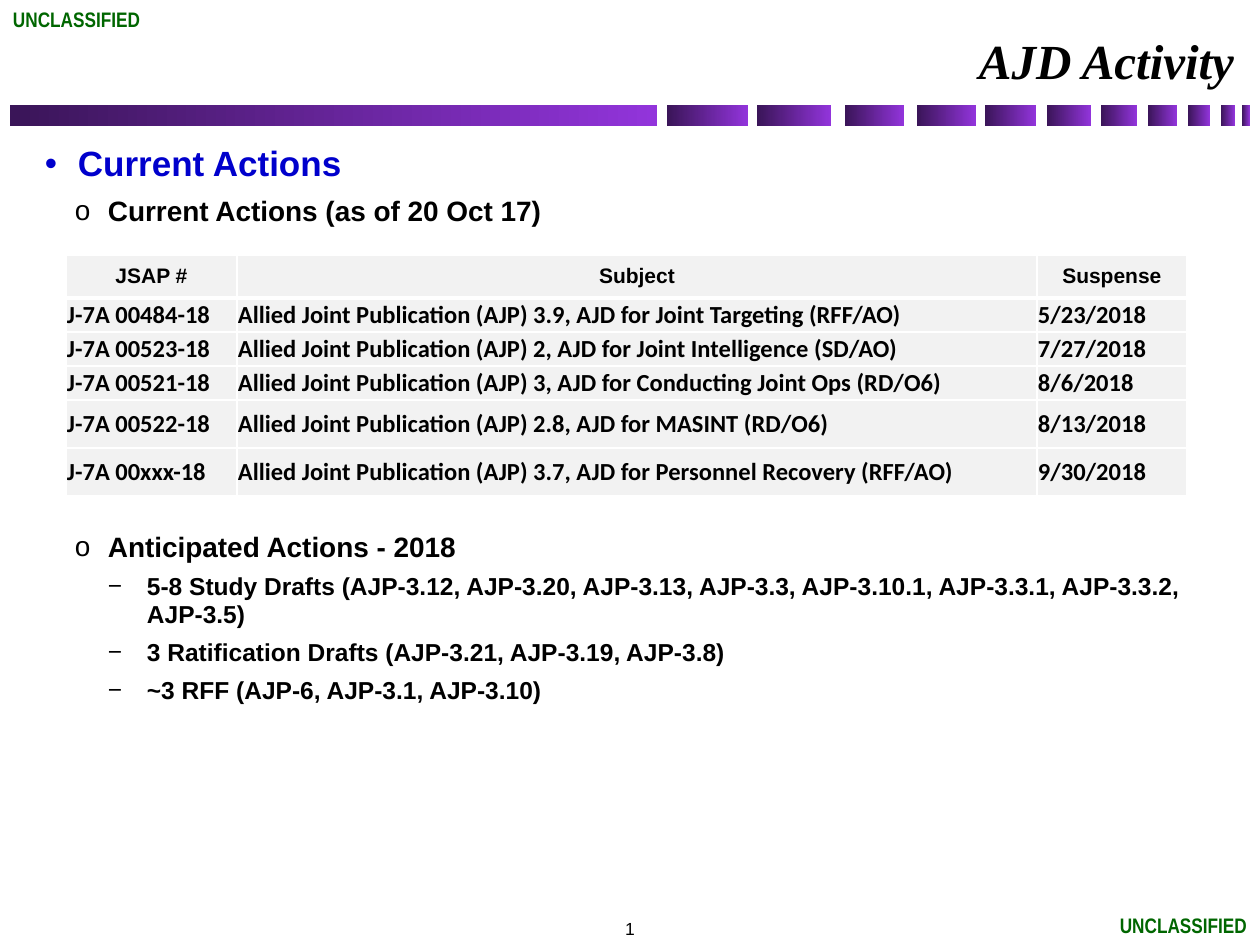
"""Build the AJD Activity status slide."""
from typing import NamedTuple

from lxml import etree
from pptx import Presentation
from pptx import util as u
from pptx.dml.color import RGBColor
from pptx.enum import shapes, text
from pptx.oxml.ns import qn

EMU_PER_PX = 914400 / 126
BLACK = RGBColor(0x00, 0x00, 0x00)
WHITE = RGBColor(0xFF, 0xFF, 0xFF)
BLUE = RGBColor(0x00, 0x00, 0xCC)
GREEN = RGBColor(0x00, 0x66, 0x00)
CELL_GRAY = RGBColor(0xF2, 0xF2, 0xF2)
DARK_PURPLE = RGBColor(0x3A, 0x15, 0x58)
LIGHT_PURPLE = RGBColor(0x92, 0x34, 0xDB)
LEFT, CENTER, RIGHT = text.PP_ALIGN.LEFT, text.PP_ALIGN.CENTER, text.PP_ALIGN.RIGHT
TOP, BOTTOM = text.MSO_ANCHOR.TOP, text.MSO_ANCHOR.BOTTOM


class Box(NamedTuple):
    left: int
    top: int
    width: int
    height: int


class Font(NamedTuple):
    size: int
    name: str = "Arial"
    color: RGBColor = BLACK
    bold: bool = True
    italic: bool = False


class Label(NamedTuple):
    words: str
    box: Box
    font: Font
    align: text.PP_ALIGN = LEFT
    anchor: text.MSO_ANCHOR = TOP
    side_inset: int = 13
    wrap: bool = True


class Level(NamedTuple):
    bullet: str
    indent: int
    hanging: int
    font: Font


class Item(NamedTuple):
    level: Level
    words: str
    space_before: float


MARKING = Font(12, "Arial Narrow", GREEN)
LABELS = [
    Label("UNCLASSIFIED", Box(942, 907, 318, 39), MARKING, RIGHT),
    Label("UNCLASSIFIED", Box(0, 1, 305, 39), MARKING),
    Label("AJD Activity", Box(159, 28, 1081, 67),
          Font(28, "Times New Roman", italic=True), RIGHT, BOTTOM, 6),
    Label("1", Box(499, 882, 262, 63), Font(10, bold=False), CENTER, BOTTOM, wrap=False),
]

BAR_TOP, BAR_HEIGHT = 105, 21
BAR_SPANS = [(10, 647), (667, 81), (757, 74), (845, 59), (917, 59), (985, 51),
             (1047, 44), (1101, 36), (1148, 29), (1188, 22), (1221, 14), (1242, 8)]

TOPIC = Level("•", 33, 33, Font(20, color=BLUE))
SECTION = Level("o", 63, 33, Font(16))
DETAIL = Level("−", 102, 39, Font(14))
BODY_BOX = Box(32, 139, 1183, 762)
ITEMS = [
    Item(TOPIC, "Current Actions", 0),
    Item(SECTION, "Current Actions (as of 20 Oct 17)", 6.4),
    Item(SECTION, "Anticipated Actions - 2018", 173.4),
    Item(DETAIL, "5-8 Study Drafts (AJP-3.12, AJP-3.20, AJP-3.13, AJP-3.3, "
                 "AJP-3.10.1, AJP-3.3.1, AJP-3.3.2, AJP-3.5)", 5.6),
    Item(DETAIL, "3 Ratification Drafts (AJP-3.21, AJP-3.19, AJP-3.8)", 5.6),
    Item(DETAIL, "~3 RFF (AJP-6, AJP-3.1, AJP-3.10)", 5.6),
]

TABLE_LEFT, TABLE_TOP = 66, 255
COLUMN_WIDTHS = [171, 800, 150]
ROW_HEIGHTS = [43, 34, 34, 34, 48, 48]
PUBLICATION = "Allied Joint Publication (AJP) "
ACTIONS = [
    ("JSAP #", "Subject", "Suspense"),
    ("J-7A 00484-18", PUBLICATION + "3.9, AJD for Joint Targeting (RFF/AO)", "5/23/2018"),
    ("J-7A 00523-18", PUBLICATION + "2, AJD for Joint Intelligence (SD/AO)", "7/27/2018"),
    ("J-7A 00521-18", PUBLICATION + "3, AJD for Conducting Joint Ops (RD/O6)", "8/6/2018"),
    ("J-7A 00522-18", PUBLICATION + "2.8, AJD for MASINT (RD/O6)", "8/13/2018"),
    ("J-7A 00xxx-18", PUBLICATION + "3.7, AJD for Personnel Recovery (RFF/AO)", "9/30/2018"),
]


def px(length: int) -> u.Emu:
    return u.Emu(round(length * EMU_PER_PX))


def add_run(paragraph, words: str, font: Font) -> None:
    run = paragraph.add_run()
    run.text = words
    run.font.size = u.Pt(font.size)
    run.font.name = font.name
    run.font.color.rgb = font.color
    run.font.bold = font.bold
    run.font.italic = font.italic


def add_frame(slide, box: Box, side_inset: int = 13):
    frame = slide.shapes.add_textbox(*map(px, box)).text_frame
    frame.margin_left = frame.margin_right = px(side_inset)
    frame.margin_top = frame.margin_bottom = px(6)
    frame.word_wrap = True
    return frame


def add_label(slide, label: Label) -> None:
    frame = add_frame(slide, label.box, label.side_inset)
    frame.word_wrap = label.wrap
    frame.vertical_anchor = label.anchor
    frame.paragraphs[0].alignment = label.align
    add_run(frame.paragraphs[0], label.words, label.font)


def add_bar(slide, left: int, width: int) -> None:
    bar = slide.shapes.add_shape(shapes.MSO_SHAPE.RECTANGLE,
                                 *map(px, (left, BAR_TOP, width, BAR_HEIGHT)))
    bar.shadow.inherit = False
    bar.line.fill.background()
    bar.fill.gradient()
    bar.fill.gradient_angle = 0
    for stop, color in zip(bar.fill.gradient_stops, (DARK_PURPLE, LIGHT_PURPLE)):
        stop.color.rgb = color


def add_item(paragraph, item: Item) -> None:
    level = item.level
    paragraph.line_spacing = 0.95
    paragraph.space_before = u.Pt(item.space_before)
    properties = paragraph._p.get_or_add_pPr()
    properties.set("marL", str(px(level.indent)))
    properties.set("indent", str(-px(level.hanging)))
    etree.SubElement(properties, qn("a:buFont"), typeface="Arial")
    etree.SubElement(properties, qn("a:buChar"), char=level.bullet)
    add_run(paragraph, item.words, level.font)


def add_borders(cell, bottom_width: int) -> None:
    properties = cell._tc.get_or_add_tcPr()
    for side, width in (("L", 1), ("R", 1), ("T", 1), ("B", bottom_width)):
        line = etree.SubElement(properties, qn(f"a:ln{side}"), w=str(u.Pt(width)))
        fill = etree.SubElement(line, qn("a:solidFill"))
        etree.SubElement(fill, qn("a:srgbClr"), val=str(WHITE))


def fill_cell(cell, words: str, is_header: bool) -> None:
    add_borders(cell, 3 if is_header else 1)
    cell.fill.solid()
    cell.fill.fore_color.rgb = CELL_GRAY
    cell.vertical_anchor = text.MSO_ANCHOR.MIDDLE
    if not is_header:
        cell.margin_left = cell.margin_right = cell.margin_top = px(1)
        cell.margin_bottom = 0
    paragraph = cell.text_frame.paragraphs[0]
    paragraph.alignment = CENTER if is_header else LEFT
    add_run(paragraph, words, Font(12) if is_header else Font(14, "Calibri"))


def add_actions(slide) -> None:
    box = Box(TABLE_LEFT, TABLE_TOP, sum(COLUMN_WIDTHS), sum(ROW_HEIGHTS))
    actions = slide.shapes.add_table(len(ROW_HEIGHTS), len(COLUMN_WIDTHS), *map(px, box)).table
    for column, width in zip(actions.columns, COLUMN_WIDTHS):
        column.width = px(width)
    for index, (row, height) in enumerate(zip(actions.rows, ROW_HEIGHTS)):
        row.height = px(height)
        for cell, words in zip(row.cells, ACTIONS[index]):
            fill_cell(cell, words, index == 0)


def main() -> None:
    deck = Presentation()
    deck.slide_width, deck.slide_height = px(1260), px(945)
    slide = deck.slides.add_slide(deck.slide_layouts[6])
    for left, width in BAR_SPANS:
        add_bar(slide, left, width)
    for label in LABELS:
        add_label(slide, label)
    body = add_frame(slide, BODY_BOX)
    for index, item in enumerate(ITEMS):
        add_item(body.add_paragraph() if index else body.paragraphs[0], item)
    add_actions(slide)
    deck.save("out.pptx")


if __name__ == "__main__":
    main()
